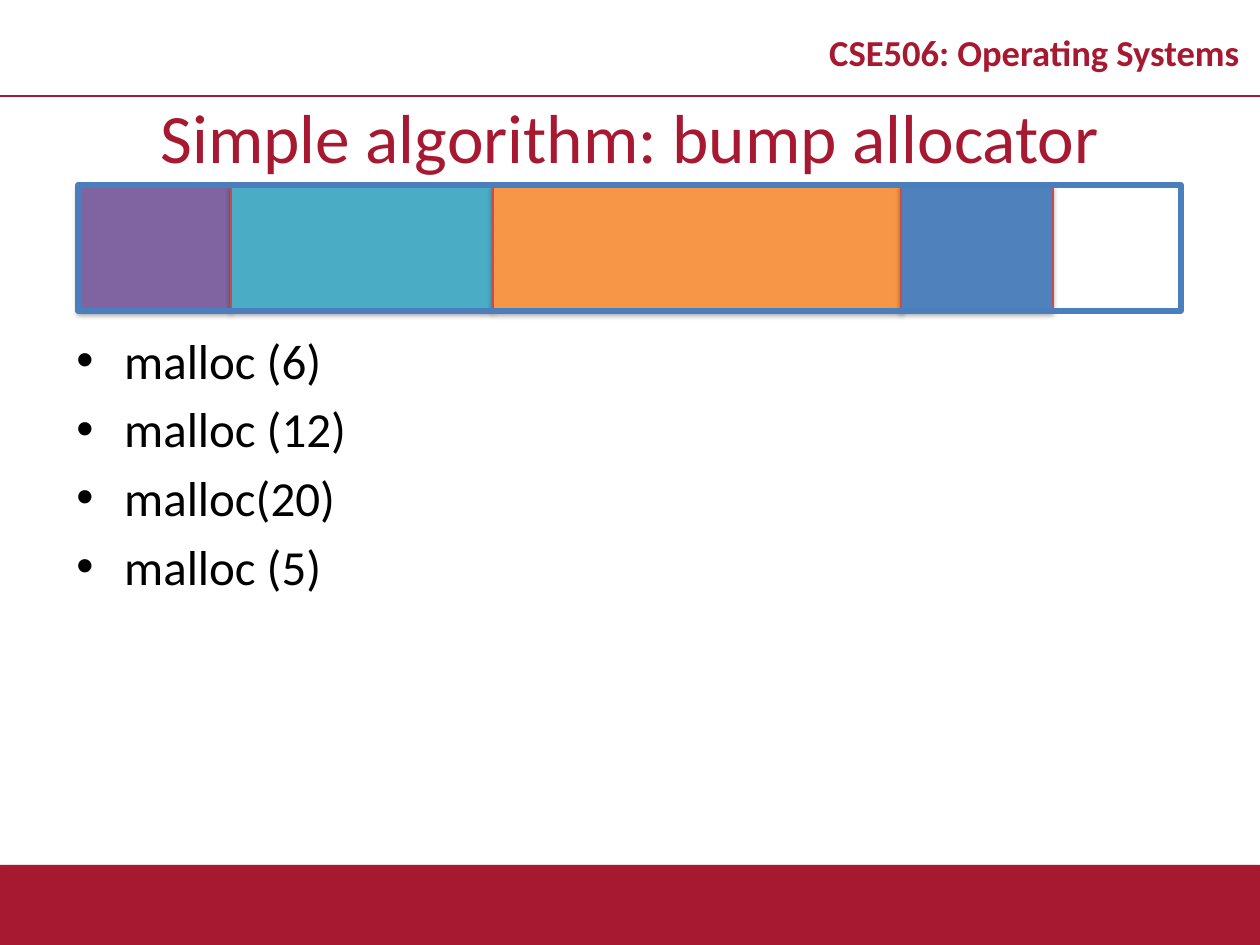
from lxml import etree
from pptx import Presentation
from pptx import util as u
from pptx.dml import color
from pptx.enum import shapes, text
from pptx.oxml import ns

# Content
COURSE = "CSE506: Operating Systems"
TITLE = "Simple algorithm: bump allocator"
# call, block width in px, block colour
ALLOCATIONS = [
    ("malloc (6)", 153, "8064A2"),
    ("malloc (12)", 262, "4BACC6"),
    ("malloc(20)", 408, "F79646"),
    ("malloc (5)", 152, "4F81BD"),
]

THEME = {
    "font": "Calibri",
    "brand": "A71930", "ink": "000000",
    "block_line": "C0504D", "heap_line": "4B7EBC",
    "title": 39.6, "course": 20.9, "body": 28,
}

# Layout in px
PX = u.Inches(1) / 126
PAGE_W, PAGE_H = 1260, 945
HEADER_Y, TITLE_H, FOOTER_H = 96, 79, 80
HEAP_X, HEAP_Y, HEAP_W, HEAP_H = 78, 185, 1103, 126


def px(*values):
    return [u.Emu(round(value * PX)) for value in values]


def rgb(name):
    return color.RGBColor.from_string(THEME.get(name, name))


def add_effects(shape, shadow=False):
    effects = etree.SubElement(shape._element.spPr, ns.qn("a:effectLst"))
    if shadow:
        outer = etree.SubElement(effects, ns.qn("a:outerShdw"), blurRad="39370",
                                 dist="22860", dir="5400000", rotWithShape="0")
        tint = etree.SubElement(outer, ns.qn("a:srgbClr"), val=THEME["ink"])
        etree.SubElement(tint, ns.qn("a:alpha"), val="35000")


def add_box(page, place, fill=None, line=None, weight=0.75, shadow=False):
    box = page.shapes.add_shape(shapes.MSO_SHAPE.RECTANGLE, *px(*place))
    if fill:
        box.fill.solid()
        box.fill.fore_color.rgb = rgb(fill)
    else:
        box.fill.background()
    if line:
        box.line.color.rgb = rgb(line)
        box.line.width = u.Pt(weight)
    else:
        box.line.fill.background()
    add_effects(box, shadow)


def add_span(para, words, size, tone, bold=False):
    span = para.add_run()
    span.text = words
    span.font.name = THEME["font"]
    span.font.size = u.Pt(THEME[size])
    span.font.color.rgb = rgb(tone)
    span.font.bold = bold


def add_text_box(page, place, anchor):
    frame = page.shapes.add_textbox(*px(*place)).text_frame
    frame.word_wrap = True
    frame.vertical_anchor = anchor
    return frame


def add_bullet(para):
    props = para._p.get_or_add_pPr()
    indent = u.Inches(0.38)
    props.set("marL", str(indent))
    props.set("indent", str(-indent))
    etree.SubElement(props, ns.qn("a:buFont"), typeface="Arial")
    etree.SubElement(props, ns.qn("a:buChar"), char="•")


def main():
    deck = Presentation()
    deck.slide_width, deck.slide_height = px(PAGE_W, PAGE_H)
    page = deck.slides.add_slide(deck.slide_layouts[5])

    # Footer band and header rule
    add_box(page, (0, PAGE_H - FOOTER_H, PAGE_W, FOOTER_H), "brand", shadow=True)
    rule = page.shapes.add_connector(shapes.MSO_CONNECTOR.STRAIGHT,
                                     *px(0, HEADER_Y, PAGE_W, HEADER_Y))
    rule.line.color.rgb = rgb("brand")
    rule.line.width = u.Pt(1)
    add_effects(rule)

    # Course name
    frame = add_text_box(page, (809, 16, 451, 79), text.MSO_ANCHOR.MIDDLE)
    para = frame.paragraphs[0]
    para.alignment = text.PP_ALIGN.CENTER
    para.line_spacing = 0.8
    add_span(para, COURSE, "course", "brand", bold=True)

    # Title
    title = page.shapes.title
    title.left, title.top, title.width, title.height = px(0, HEADER_Y, PAGE_W, TITLE_H)
    title.text_frame.vertical_anchor = text.MSO_ANCHOR.MIDDLE
    para = title.text_frame.paragraphs[0]
    para.alignment = text.PP_ALIGN.CENTER
    add_span(para, TITLE, "title", "brand")

    # Allocation calls
    frame = add_text_box(page, (64, 324, 1134, 535), text.MSO_ANCHOR.TOP)
    for index, (call, _, _) in enumerate(ALLOCATIONS):
        para = frame.add_paragraph() if index else frame.paragraphs[0]
        add_bullet(para)
        if index:
            para.space_before = u.Pt(THEME["body"] * 0.2)
        add_span(para, call, "body", "ink")

    # Allocated blocks, packed left to right, then the heap outline
    left = HEAP_X
    for _, width, fill in ALLOCATIONS:
        add_box(page, (left, HEAP_Y, width, HEAP_H), fill, "block_line", shadow=True)
        left += width
    add_box(page, (HEAP_X, HEAP_Y, HEAP_W, HEAP_H), line="heap_line", weight=3)

    deck.save("out.pptx")


if __name__ == "__main__":
    main()
